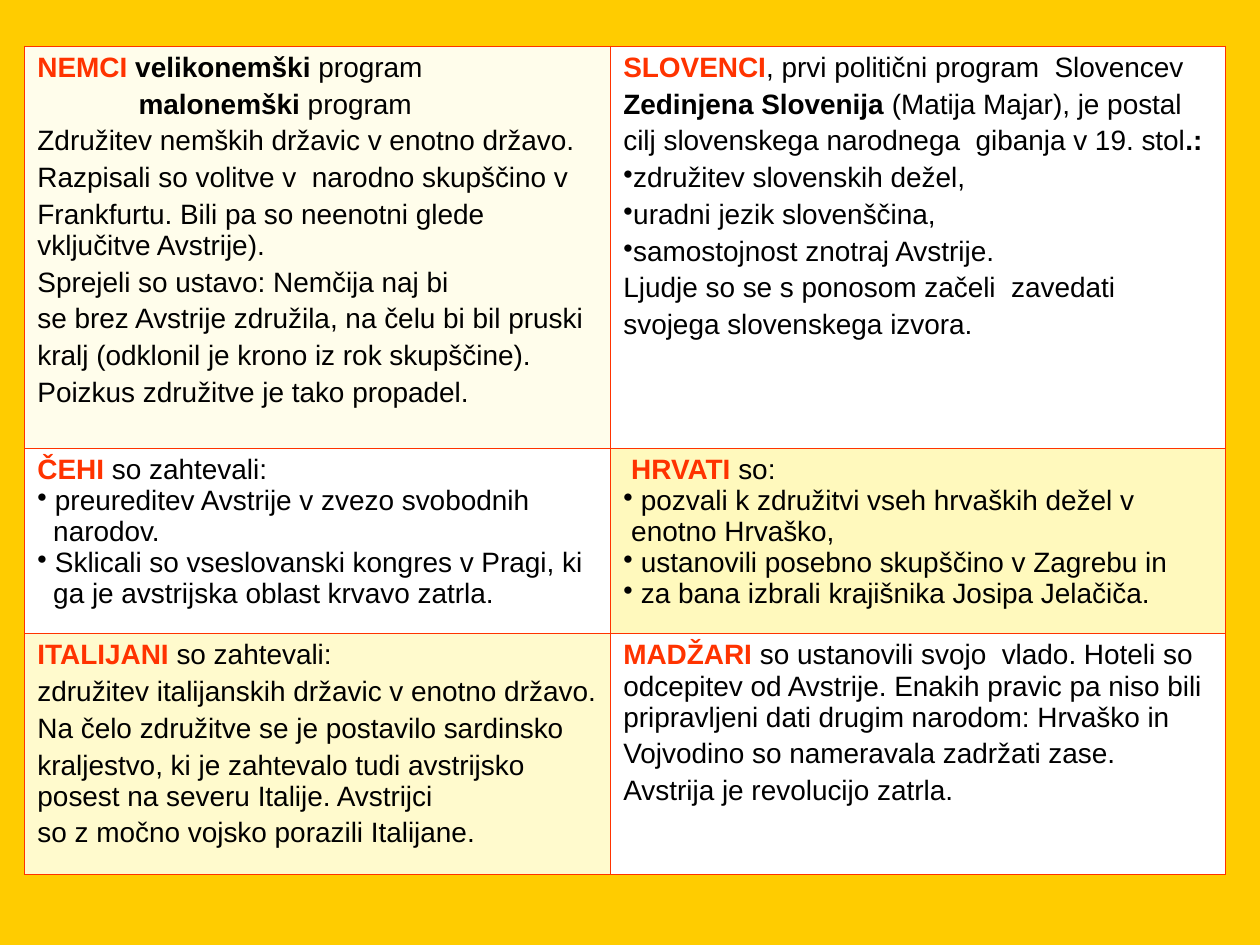
"""Build a slide with a table of national programmes in the revolutionary year."""
from dataclasses import dataclass

from pptx import Presentation
from pptx.dml.color import RGBColor as Rgb
from pptx.oxml import parse_xml
from pptx.oxml.ns import nsdecls
from pptx.util import Pt


@dataclass(frozen=True)
class Theme:
    font: str = "Arial"
    size: float = 16
    gap: float = 3.2
    border: float = 0.5
    background: str = "FFCC00"
    accent: str = "FF3300"
    text: str = "000000"
    white: str = "FFFFFF"
    ivory: str = "FFFDEB"
    lemon: str = "FFF9BD"
    cream: str = "FFFACD"


theme = Theme()


def add_span(para, text, bold=False, color=theme.text):
    span = para.add_run()
    span.text = text
    span.font.name = theme.font
    span.font.size = Pt(theme.size)
    span.font.bold = bold
    span.font.color.rgb = Rgb.from_string(color)


def set_indent(para, left, bullet):
    props = para._p.get_or_add_pPr()
    props.set("marL", str(Pt(left)))
    props.set("indent", str(Pt(-left if bullet else 0)))
    mark = '<a:buChar {} char="•"/>' if bullet else "<a:buNone {}/>"
    props.append(parse_xml(mark.format(nsdecls("a"))))


HEAD = {"bold": True, "color": theme.accent}
BOLD = {"bold": True}
PLAIN = {}
TIGHT, HANGING, SECOND = 5.6, 10, 57.8

germans = [
    (0, False, [("NEMCI ", HEAD), ("velikonemški", BOLD), (" program", PLAIN)]),
    (SECOND, False, [("malonemški", BOLD), (" program", PLAIN)]),
    "Združitev nemških državic v enotno državo.",
    "Razpisali so volitve v  narodno skupščino v",
    "Frankfurtu. Bili pa so neenotni glede vključitve Avstrije).",
    "Sprejeli so ustavo: Nemčija naj bi",
    "se brez Avstrije združila, na čelu bi bil pruski",
    "kralj (odklonil je krono iz rok skupščine).",
    "Poizkus združitve je tako propadel.",
]
slovenes = [
    (0, False, [("SLOVENCI", HEAD), (", prvi politični program  Slovencev", PLAIN)]),
    (0, False, [("Zedinjena Slovenija", BOLD), (" (Matija Majar), je postal", PLAIN)]),
    (0, False, [("cilj slovenskega narodnega  gibanja v 19. stol", PLAIN), (".:", BOLD)]),
    (TIGHT, True, [("združitev slovenskih dežel,", PLAIN)]),
    (TIGHT, True, [("uradni jezik slovenščina,", PLAIN)]),
    (TIGHT, True, [("samostojnost znotraj Avstrije.", PLAIN)]),
    "Ljudje so se s ponosom začeli  zavedati",
    "svojega slovenskega izvora.",
]
czechs = [
    (0, False, [("ČEHI", HEAD), (" so zahtevali:", PLAIN)]),
    (HANGING, True, [("preureditev Avstrije v zvezo svobodnih", PLAIN)]),
    (9, False, [("narodov.", PLAIN)]),
    (HANGING, True, [("Sklicali so vseslovanski kongres v Pragi, ki", PLAIN)]),
    (9, False, [("ga je avstrijska oblast krvavo zatrla.", PLAIN)]),
]
croats = [
    (4.5, False, [("HRVATI", HEAD), (" so:", PLAIN)]),
    (HANGING, True, [("pozvali k združitvi vseh hrvaških dežel v", PLAIN)]),
    (4.5, False, [("enotno Hrvaško,", PLAIN)]),
    (HANGING, True, [("ustanovili posebno skupščino v Zagrebu in", PLAIN)]),
    (HANGING, True, [("za bana izbrali krajišnika Josipa Jelačiča.", PLAIN)]),
]
italians = [
    (0, False, [("ITALIJANI", HEAD), (" so zahtevali:", PLAIN)]),
    "združitev italijanskih državic v enotno državo.",
    "Na čelo združitve se je postavilo sardinsko",
    "kraljestvo, ki je zahtevalo tudi avstrijsko posest na severu Italije. Avstrijci",
    "so z močno vojsko porazili Italijane.",
]
hungarians = [
    (0, False, [("MADŽARI ", HEAD), (
        "so ustanovili svojo  vlado. Hoteli so odcepitev od Avstrije. Enakih pravic "
        "pa niso bili  pripravljeni dati drugim narodom: Hrvaško in", PLAIN)]),
    "Vojvodino so nameravala zadržati zase.",
    "Avstrija je revolucijo zatrla.",
]
cells = [
    (germans, theme.ivory, theme.gap), (slovenes, theme.white, theme.gap),
    (czechs, theme.white, 0), (croats, theme.lemon, 0),
    (italians, theme.cream, theme.gap), (hungarians, theme.white, theme.gap),
]
widths = [334.8, 351.4]
heights = [229.7, 106, 137.5]

deck = Presentation()
deck.slide_width, deck.slide_height = Pt(720), Pt(540)
page = deck.slides.add_slide(deck.slide_layouts[6])
page.background.fill.solid()
page.background.fill.fore_color.rgb = Rgb.from_string(theme.background)

frame = page.shapes.add_table(
    len(heights), len(widths), Pt(14.2), Pt(26.3), Pt(sum(widths)), Pt(sum(heights)))
table = frame.table
table.first_row = table.horz_banding = False
for column, width in zip(table.columns, widths):
    column.width = Pt(width)
for row, height in zip(table.rows, heights):
    row.height = Pt(height)

for cell, (lines, fill, gap) in zip(table.iter_cells(), cells):
    cell.margin_left = cell.margin_right = Pt(7.2)
    cell.margin_top = cell.margin_bottom = Pt(3.6)
    for side in "LRTB":
        cell._tc.get_or_add_tcPr().append(parse_xml(
            f'<a:ln{side} {nsdecls("a")} w="{Pt(theme.border)}"><a:solidFill>'
            f'<a:srgbClr val="{theme.accent}"/></a:solidFill></a:ln{side}>'))
    cell.fill.solid()
    cell.fill.fore_color.rgb = Rgb.from_string(fill)
    for index, line in enumerate(lines):
        left, bullet, spans = (0, False, [(line, PLAIN)]) if isinstance(line, str) else line
        para = cell.text_frame.add_paragraph() if index else cell.text_frame.paragraphs[0]
        para.space_before = Pt(gap if index else 0)
        set_indent(para, left, bullet)
        for text, style in spans:
            add_span(para, text, **style)

deck.save("out.pptx")
